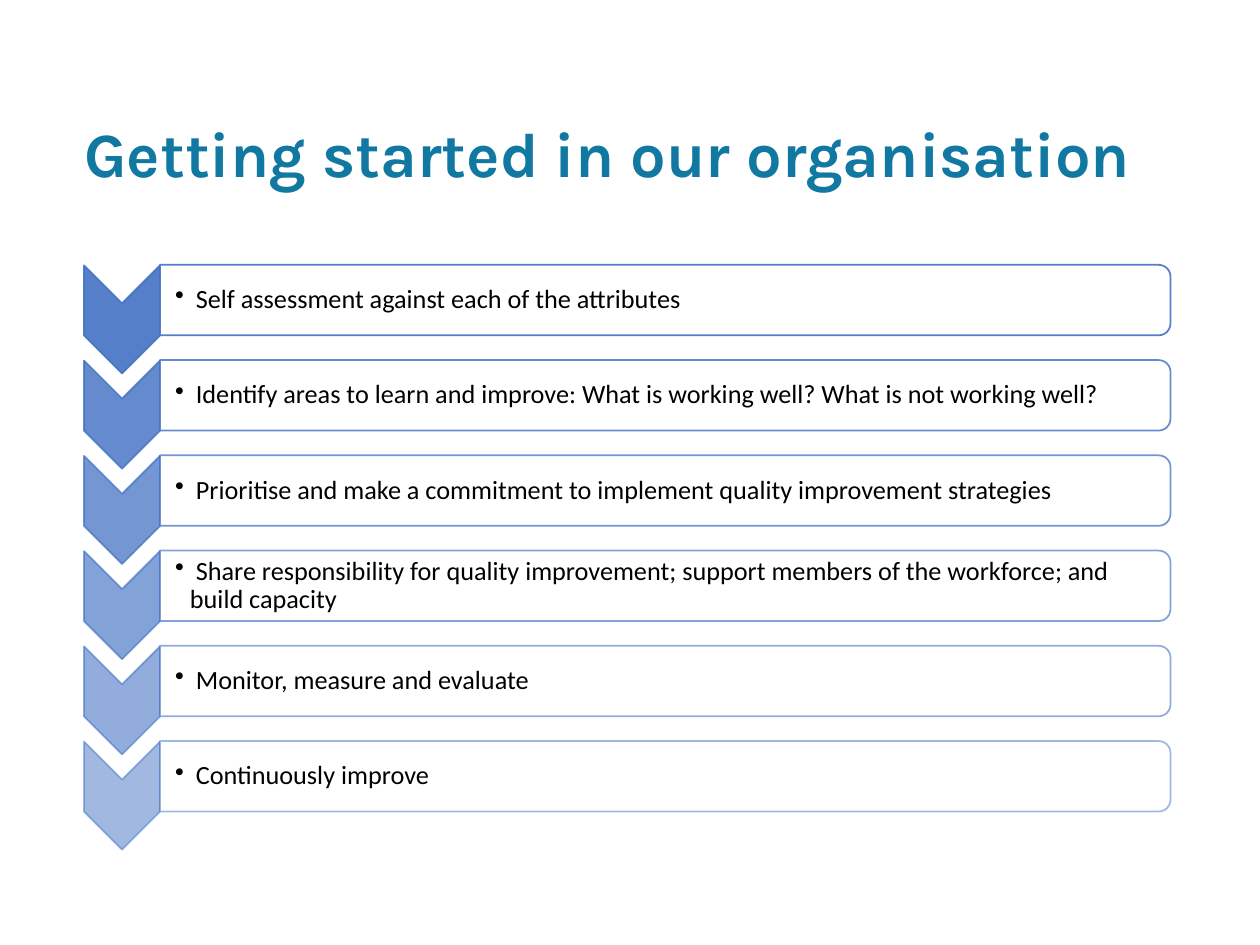
from dataclasses import dataclass

from lxml import etree
from pptx import Presentation
from pptx.dml.color import RGBColor
from pptx.enum.shapes import MSO_SHAPE
from pptx.enum.text import MSO_ANCHOR
from pptx.oxml.ns import qn
from pptx.util import Cm, Pt

CHEVRON = MSO_SHAPE.CHEVRON
ROUND_TOP = MSO_SHAPE.ROUND_2_SAME_RECTANGLE
MIDDLE = MSO_ANCHOR.MIDDLE


@dataclass(frozen=True)
class Theme:
    blue: RGBColor = RGBColor(0x44, 0x72, 0xC4)
    white: RGBColor = RGBColor(0xFF, 0xFF, 0xFF)
    black: RGBColor = RGBColor(0, 0, 0)
    teal: RGBColor = RGBColor(0x11, 0x78, 0xA2)
    title_font: str = "Karla"
    body_font: str = "Calibri"
    title_size: Pt = Pt(36)
    body_size: Pt = Pt(15)
    line_width: Pt = Pt(1)


@dataclass(frozen=True)
class Step:
    text: str
    top: float
    opacity: int


THEME = Theme()
FIRST_TOP, PITCH = 5.34, 1.92  # cm
TEXTS = [
    "Self assessment against each of the attributes",
    "Identify areas to learn and improve: What is working well? What is not working well?",
    "Prioritise and make a commitment to implement quality improvement strategies",
    "Share responsibility for quality improvement; support members of the workforce; "
    "and build capacity",
    "Monitor, measure and evaluate",
    "Continuously improve",
]
STEPS = [Step(text, FIRST_TOP + i * PITCH, 90 - 8 * i) for i, text in enumerate(TEXTS)]


def set_opacity(fill_parent, percent: int) -> None:
    color = fill_parent.find(qn("a:solidFill"))[0]
    etree.SubElement(color, qn("a:alpha"), val=str(percent * 1000))


def add_turned(slide, kind, center_x: float, center_y: float, width: float, height: float,
               fill: RGBColor, fill_opacity: int, line_opacity: int) -> None:
    """Draw a shape turned a quarter clockwise about its centre (cm)."""
    sp = slide.shapes.add_shape(kind, Cm(center_x - width / 2), Cm(center_y - height / 2),
                                Cm(width), Cm(height))
    sp.rotation = 90
    sp.shadow.inherit = False
    sp.fill.solid()
    sp.fill.fore_color.rgb = fill
    sp.line.color.rgb = THEME.blue
    sp.line.width = THEME.line_width
    set_opacity(sp._element.spPr, fill_opacity)
    set_opacity(sp.line._ln, line_opacity)


def add_text(slide, text: str, box: tuple, insets: tuple, font: dict,
             color: RGBColor, bullet: bool = False) -> None:
    sp = slide.shapes.add_textbox(*(Cm(v) for v in box))
    tf = sp.text_frame
    sides = ("margin_left", "margin_top", "margin_right", "margin_bottom")
    frame = {"word_wrap": True, "vertical_anchor": MIDDLE,
             **dict(zip(sides, (Cm(v) for v in insets)))}
    for name, value in frame.items():
        setattr(tf, name, value)
    p = tf.paragraphs[0]
    p.line_spacing = 0.9
    if bullet:
        pPr = p._p.get_or_add_pPr()
        pPr.set("marL", str(Cm(0.3)))
        pPr.set("indent", str(-Cm(0.3)))
        etree.SubElement(pPr, qn("a:buChar"), char="•")
    r = p.add_run()
    r.text = text
    for name, value in font.items():
        setattr(r.font, name, value)
    r.font.color.rgb = color


def add_step(slide, step: Step) -> None:
    # Text panel, with its rounded corners on the right
    add_turned(slide, CHEVRON, 2.46, step.top + 1.1, 2.18, 1.53,
               THEME.blue, step.opacity, step.opacity)
    add_turned(slide, ROUND_TOP, 13.41, step.top + 0.71, 1.42, 20.37,
               THEME.white, 90, step.opacity)
    add_text(slide, " " + step.text, (3.23, step.top + 0.07, 20.29, 1.28),
             (0.3, 0.03, 0.03, 0.03),
             {"name": THEME.body_font, "size": THEME.body_size}, THEME.black, bullet=True)


def main() -> None:
    prs = Presentation()
    prs.slide_width, prs.slide_height = Cm(25.4), Cm(19.05)
    slide = prs.slides.add_slide(prs.slide_layouts[6])

    # Steps, fading from top to bottom
    for step in STEPS:
        add_step(slide, step)

    # Title
    add_text(slide, "Getting started in our organisation", (1.7, 2.34, 21.9, 1.65),
             (0, 0.13, 0, 0.13),
             {"name": THEME.title_font, "size": THEME.title_size, "bold": True}, THEME.teal)

    prs.save("out.pptx")


if __name__ == "__main__":
    main()
